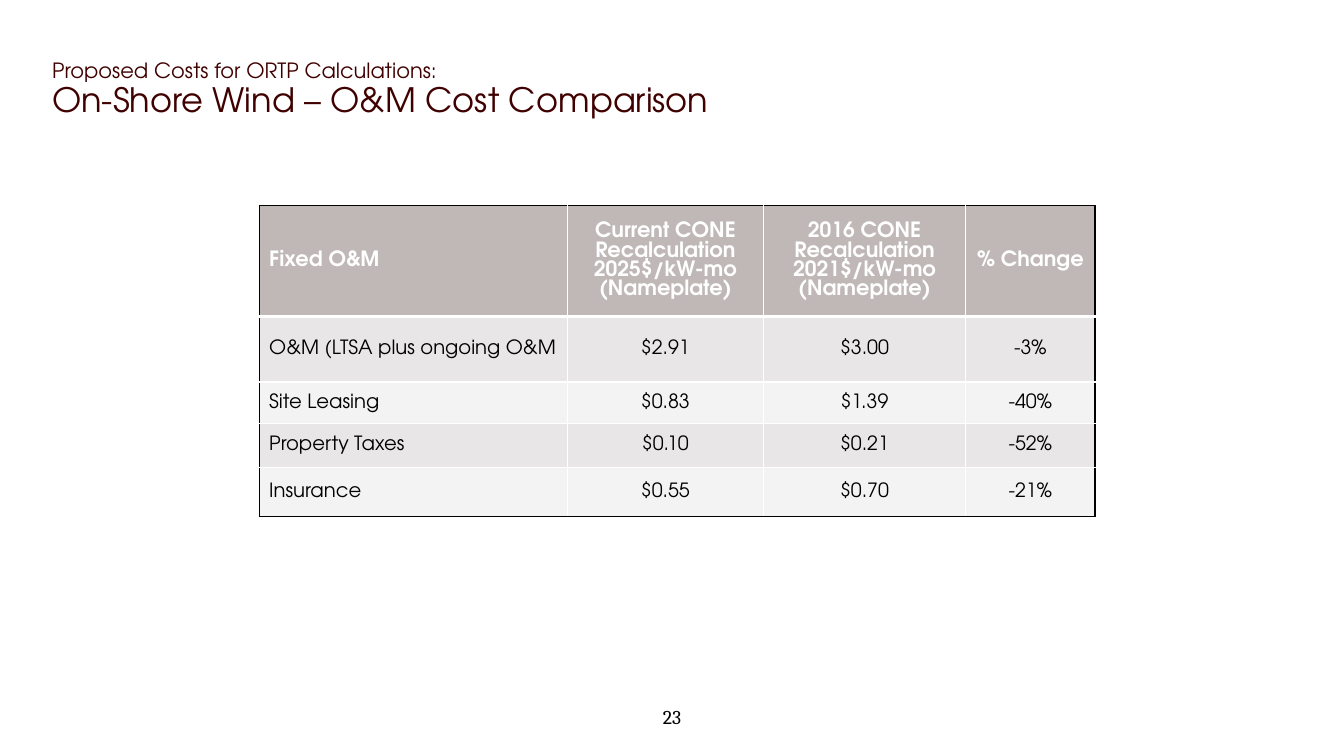
from lxml import etree
from pptx import Presentation, util as u
from pptx.dml.color import RGBColor
from pptx.enum import text as t
from pptx.oxml.ns import qn

COLORS = {
    "title": "400000", "black": "000000", "white": "FFFFFF",
    "header": "BFB8B7", "odd_row": "E8E6E6", "even_row": "F4F3F3",
}
SANS, SERIF = "TeX Gyre Adventor", "Cambria"
LEFT, CENTER = t.PP_ALIGN.LEFT, t.PP_ALIGN.CENTER

COLUMN_WIDTHS = [3.06, 1.94, 2.01, 1.28]
ROW_HEIGHTS = [1.09, 0.65, 0.41, 0.44, 0.48]
COSTS = [
    ["Fixed O&M",
     "Current CONE Recalculation\n2025$/kW-mo\n(Nameplate)",
     "2016 CONE Recalculation 2021$/kW-mo\n(Nameplate)",
     "% Change"],
    ["O&M (LTSA plus ongoing O&M", "$2.91", "$3.00", "-3%"],
    ["Site Leasing", "$0.83", "$1.39", "-40%"],
    ["Property Taxes", "$0.10", "$0.21", "-52%"],
    ["Insurance", "$0.55", "$0.70", "-21%"],
]


def set_font(font, color, **values):
    for name, value in values.items():
        setattr(font, name, value)
    font.color.rgb = RGBColor.from_string(COLORS[color])


def add_text(slide, box, lines, color, font_name, anchor, **paragraph_format):
    """Add one paragraph whose lines are (text, size) pairs."""
    frame = slide.shapes.add_textbox(*map(u.Inches, box)).text_frame
    frame.word_wrap = True
    frame.vertical_anchor = anchor
    paragraph = frame.paragraphs[0]
    for name, value in paragraph_format.items():
        setattr(paragraph, name, value)
    for index, (text, size) in enumerate(lines):
        if index:
            paragraph.add_line_break()
        run = paragraph.add_run()
        run.text = text
        set_font(run.font, color, name=font_name, size=u.Pt(size))


def set_borders(cell, borders):
    """Draw borders given as {side: (color, points)}, in the order L, R, T, B."""
    properties = cell._tc.get_or_add_tcPr()
    for side, (color, points) in borders.items():
        line = etree.SubElement(properties, qn(f"a:ln{side}"), w=str(u.Pt(points)))
        fill = etree.SubElement(line, qn("a:solidFill"))
        etree.SubElement(fill, qn("a:srgbClr"), val=COLORS[color])


def cell_borders(row, column):
    """Black around the table, white inside, thick below the header."""
    last_row, last_column = len(ROW_HEIGHTS) - 1, len(COLUMN_WIDTHS) - 1

    def edge(is_outer):
        return "black" if is_outer else "white"

    return {
        "L": (edge(column == 0), 1),
        "R": (edge(column == last_column), 1),
        "T": (edge(row == 0), 3 if row == 1 else 1),
        "B": (edge(row == last_row), 3 if row == 0 else 1),
    }


def fill_cell(cell, text, row, column):
    is_header = row == 0
    set_borders(cell, cell_borders(row, column))
    cell.fill.solid()
    fill = "header" if is_header else ("odd_row" if row % 2 else "even_row")
    cell.fill.fore_color.rgb = RGBColor.from_string(COLORS[fill])
    cell.vertical_anchor = t.MSO_ANCHOR.MIDDLE
    cell.text = text
    for paragraph in cell.text_frame.paragraphs:
        paragraph.alignment = CENTER if column else LEFT
        for run in paragraph.runs:
            set_font(run.font, "white" if is_header else "black", name=SANS,
                     size=u.Pt(15 if is_header else 14), bold=is_header)


def add_cost_table(slide, left, top):
    size = (sum(COLUMN_WIDTHS), sum(ROW_HEIGHTS))
    table = slide.shapes.add_table(
        len(ROW_HEIGHTS), len(COLUMN_WIDTHS),
        *map(u.Inches, (left, top, *size))).table
    table.first_row = True
    table.horz_banding = False
    for column, width in zip(table.columns, COLUMN_WIDTHS):
        column.width = u.Inches(width)
    for row, height in zip(table.rows, ROW_HEIGHTS):
        row.height = u.Inches(height)
    for row, texts in enumerate(COSTS):
        for column, text in enumerate(texts):
            fill_cell(table.cell(row, column), text, row, column)


def main():
    presentation = Presentation()
    presentation.slide_width = u.Inches(13.33)
    presentation.slide_height = u.Inches(7.5)
    slide = presentation.slides.add_slide(presentation.slide_layouts[6])
    add_text(slide, (0.42, 0.27, 11.5, 1.25),
             [("Proposed Costs for ORTP Calculations:", 15),
              ("On-Shore Wind – O&M Cost Comparison", 24)],
             "title", SANS, t.MSO_ANCHOR.MIDDLE, line_spacing=0.9)
    add_cost_table(slide, 2.57, 2.04)
    add_text(slide, (5.34, 6.97, 2.65, 0.43), [("23", 14)],
             "black", SERIF, t.MSO_ANCHOR.TOP, line_spacing=0.9, alignment=CENTER)
    presentation.save("out.pptx")


if __name__ == "__main__":
    main()
